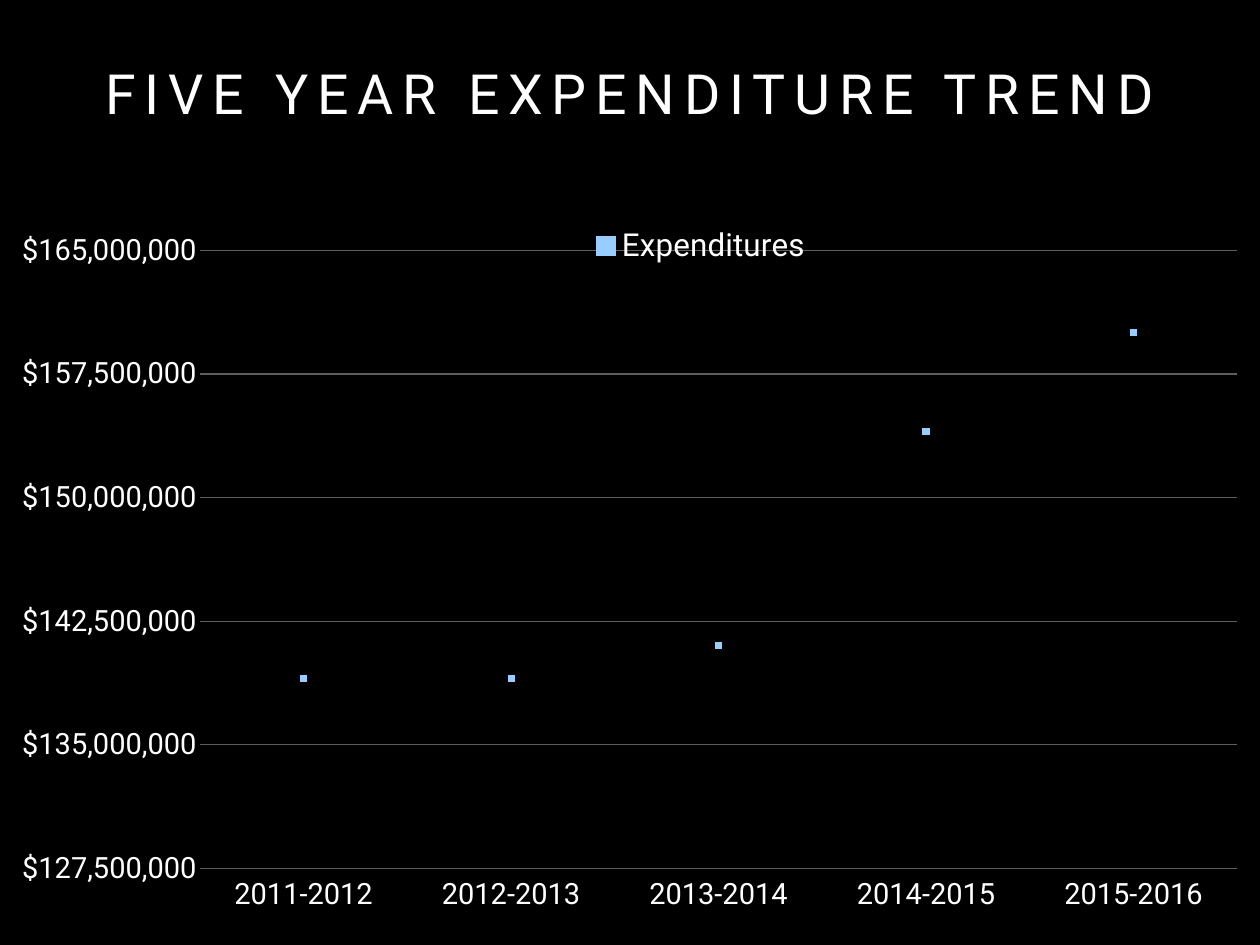
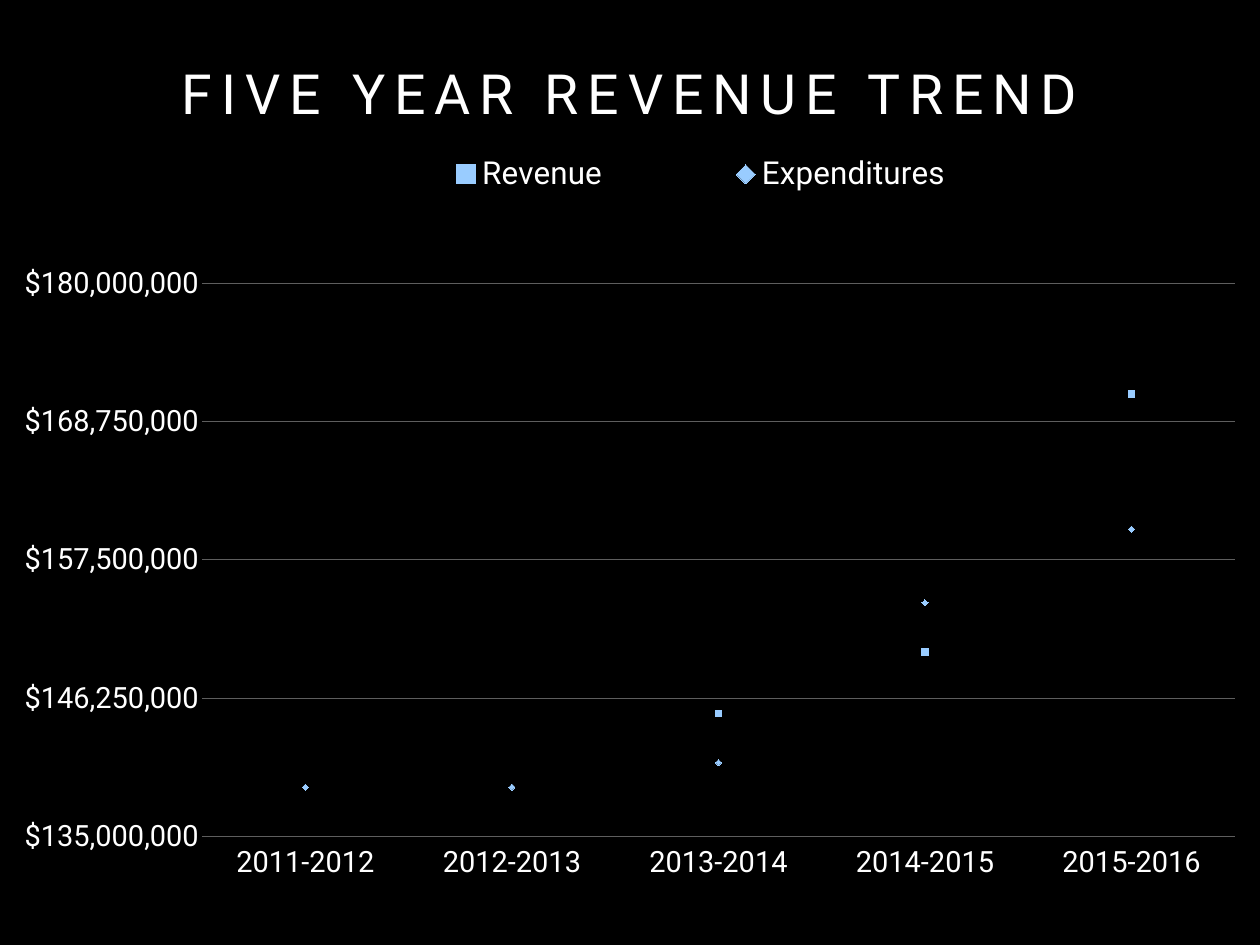
"""Build two dark slides showing five-year expenditure and revenue trends."""
from dataclasses import dataclass
from typing import Optional

from lxml.etree import SubElement
from pptx import Presentation
from pptx.chart.chart import Chart
from pptx.chart.data import CategoryChartData
from pptx.dml.color import RGBColor
from pptx.enum.chart import XL_CHART_TYPE as ChartType
from pptx.enum.chart import XL_LEGEND_POSITION as LegendPosition
from pptx.enum.chart import XL_MARKER_STYLE as MarkerStyle
from pptx.enum.chart import XL_TICK_LABEL_POSITION as LabelPosition
from pptx.enum.chart import XL_TICK_MARK as TickMark
from pptx.enum.text import MSO_ANCHOR, MSO_AUTO_SIZE, PP_ALIGN
from pptx.oxml.ns import qn
from pptx.slide import Slide
from pptx.util import Pt

COLORS = {
    "background": "000000",
    "text": "FFFFFF",
    "grid": "5E5E5E",
    "marker": "99CCFF",
}
FONT = "Roboto"
YEARS = [f"{year}-{year + 1}" for year in range(2011, 2016)]
EXPENDITURES = (139_000_000, 139_000_000, 141_000_000, 154_000_000, 160_000_000)
REVENUE = (None, None, 145_000_000, 150_000_000, 171_000_000)


@dataclass(frozen=True)
class Box:
    left: float
    top: float
    width: float
    height: float

    def in_points(self) -> tuple[Pt, Pt, Pt, Pt]:
        return Pt(self.left), Pt(self.top), Pt(self.width), Pt(self.height)


@dataclass(frozen=True)
class TrendSeries:
    name: str
    values: tuple[Optional[int], ...]
    marker: MarkerStyle


@dataclass(frozen=True)
class TrendSlide:
    title: str
    chart_box: Box
    plot_share: Box
    legend_share: Box
    minimum: int
    maximum: int
    step: int
    series: tuple[TrendSeries, ...]


TITLE_BOX = Box(52, 48, 920, 112)
TREND_SLIDES = (
    TrendSlide(
        "FIVE YEAR EXPENDITURE TREND",
        Box(18, 36, 988, 705),
        Box(0.13, 0.24, 0.87, 0.72),
        Box(0.24, 0.2, 0.62, 0.07),
        127_500_000, 165_000_000, 7_500_000,
        (TrendSeries("Expenditures", EXPENDITURES, MarkerStyle.SQUARE),),
    ),
    TrendSlide(
        "FIVE YEAR REVENUE TREND",
        Box(20, 118, 984, 597),
        Box(0.13, 0.19, 0.87, 0.76),
        Box(0.24, 0, 0.62, 0.08),
        135_000_000, 180_000_000, 11_250_000,
        (
            TrendSeries("Revenue", REVENUE, MarkerStyle.SQUARE),
            TrendSeries("Expenditures", EXPENDITURES, MarkerStyle.DIAMOND),
        ),
    ),
)


def rgb(name: str) -> RGBColor:
    return RGBColor.from_string(COLORS[name])


def style_font(font, size: float) -> None:
    font.name = FONT
    font.size = Pt(size)
    font.bold = False
    font.color.rgb = rgb("text")


def add_title(slide: Slide, text: str) -> None:
    title = slide.shapes.title
    title.left, title.top, title.width, title.height = TITLE_BOX.in_points()
    frame = title.text_frame
    frame.text = text
    frame.word_wrap = True
    frame.auto_size = MSO_AUTO_SIZE.NONE
    frame.vertical_anchor = MSO_ANCHOR.TOP
    frame.margin_left = frame.margin_top = frame.margin_right = frame.margin_bottom = Pt(0)
    paragraph = frame.paragraphs[0]
    paragraph.alignment = PP_ALIGN.CENTER
    run = paragraph.runs[0]
    style_font(run.font, 45)
    run._r.get_or_add_rPr().set("spc", "720")


def place_part(part, index: int, share: Box, inner: bool = False) -> None:
    for layout in part.findall(qn("c:layout")):
        part.remove(layout)
    layout = SubElement(part, qn("c:layout"))
    manual = SubElement(layout, qn("c:manualLayout"))
    settings = [("layoutTarget", "inner")] if inner else []
    settings += [("xMode", "edge"), ("yMode", "edge")]
    settings += [("x", share.left), ("y", share.top), ("w", share.width), ("h", share.height)]
    for tag, value in settings:
        SubElement(manual, qn(f"c:{tag}")).set("val", str(value))
    part.insert(index, layout)


def style_axes(chart: Chart, trend: TrendSlide) -> None:
    for axis in (chart.category_axis, chart.value_axis):
        axis.major_tick_mark = axis.minor_tick_mark = TickMark.NONE
        axis.format.line.fill.background()
        style_font(axis.tick_labels.font, 24)
    chart.category_axis.tick_label_position = LabelPosition.LOW
    value_axis = chart.value_axis
    value_axis.minimum_scale = trend.minimum
    value_axis.maximum_scale = trend.maximum
    value_axis.major_unit = trend.step
    value_axis.tick_labels.number_format = '"$"#,##0'
    value_axis.tick_labels.number_format_is_linked = False
    value_axis.has_major_gridlines = True
    grid = value_axis.major_gridlines.format.line
    grid.color.rgb = rgb("grid")
    grid.width = Pt(1)


def add_trend_chart(slide: Slide, trend: TrendSlide) -> None:
    data = CategoryChartData(number_format='"$"#,##0')
    data.categories = YEARS
    for item in trend.series:
        data.add_series(item.name, item.values)
    frame = slide.shapes.add_chart(ChartType.LINE_MARKERS, *trend.chart_box.in_points(), data)
    chart = frame.chart
    style_font(chart.font, 10)
    chart.has_title = False
    style_axes(chart, trend)

    chart.has_legend = True
    legend = chart.legend
    legend.position = LegendPosition.TOP
    legend.include_in_layout = True
    style_font(legend.font, 26)
    place_part(legend._element, 1, trend.legend_share)
    place_part(chart._chartSpace.chart.plotArea, 0, trend.plot_share, inner=True)

    plot = chart.plots[0]
    plot.vary_by_categories = False
    for series, item in zip(plot.series, trend.series):
        series.smooth = False
        series.format.line.fill.background()
        marker = series.marker
        marker.style = item.marker
        marker.size = 5
        marker.format.fill.solid()
        marker.format.fill.fore_color.rgb = rgb("marker")
        marker.format.line.fill.background()


def main() -> None:
    presentation = Presentation()
    presentation.slide_width, presentation.slide_height = Pt(1024), Pt(768)
    background = presentation.slide_master.background.fill
    background.solid()
    background.fore_color.rgb = rgb("background")
    title_only = presentation.slide_layouts[5]
    for trend in TREND_SLIDES:
        slide = presentation.slides.add_slide(title_only)
        add_title(slide, trend.title)
        add_trend_chart(slide, trend)
    presentation.save("out.pptx")


if __name__ == "__main__":
    main()
